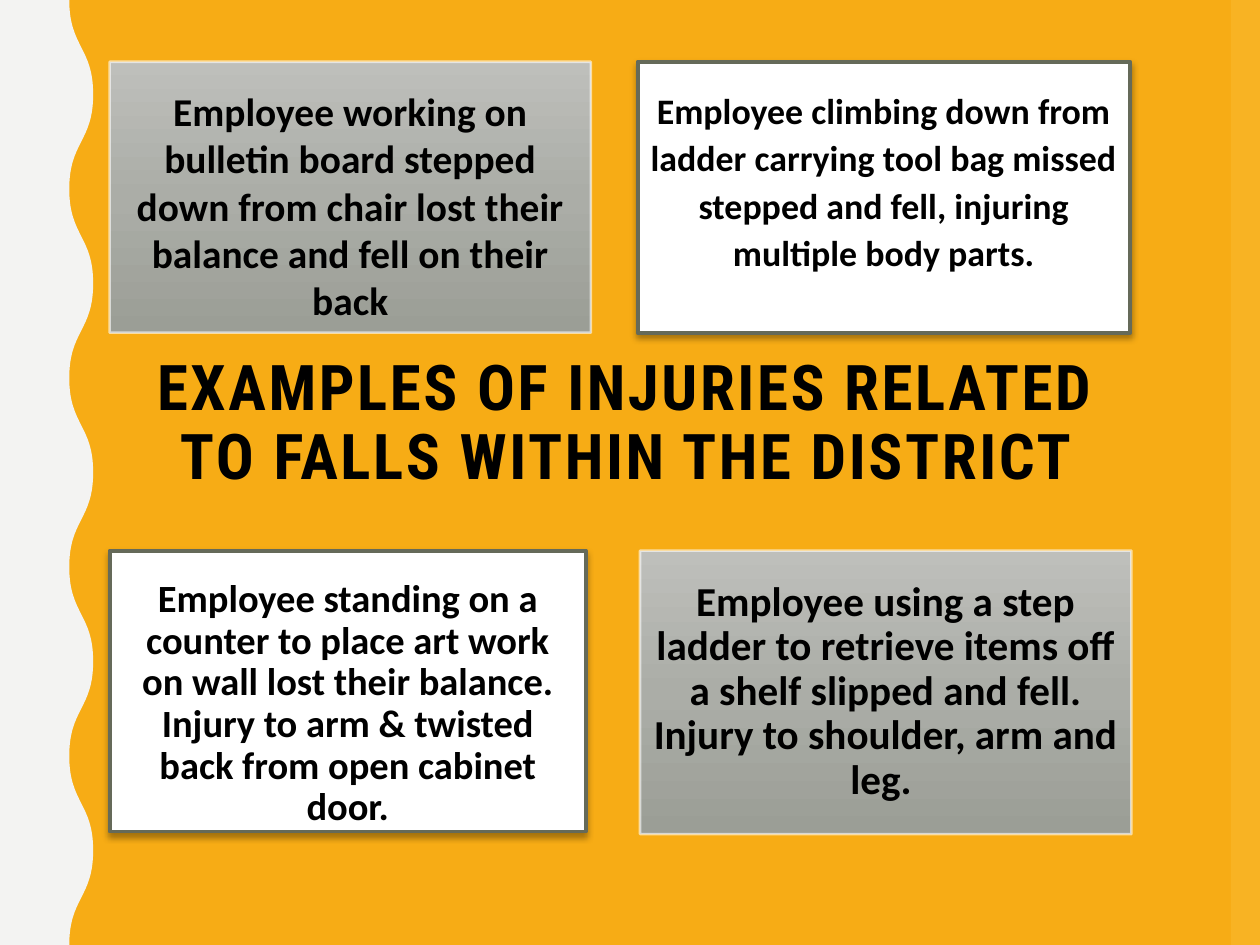
import copy
from dataclasses import dataclass

import pptx
import pptx.dml.color
import pptx.enum.shapes
import pptx.enum.text
import pptx.oxml
import pptx.oxml.ns
import pptx.util

Inches, Pt = pptx.util.Inches, pptx.util.Pt
PP_ALIGN, ANCHOR = pptx.enum.text.PP_ALIGN, pptx.enum.text.MSO_ANCHOR
RECT = pptx.enum.shapes.MSO_SHAPE.RECTANGLE
qn = pptx.oxml.ns.qn
NS = pptx.oxml.ns.nsdecls("a")
GRAY_STOPS = ("BEBFBB", "ABADA7", "9B9E96")


@dataclass
class Card:
    text: str
    box: tuple[float, float, float, float]
    size: float
    spacing: float
    inset_top: float
    gray: bool
    inset_side: float = 0.08
    middle: bool = False
    ph: int | None = None


CARDS = [
    Card("Employee climbing down from ladder carrying tool bag missed stepped and fell, "
         "injuring multiple body parts.",
         (5.06, 0.49, 3.91, 2.15), 20.5, 1.1, 0.18, False, ph=3),
    Card("Employee working on bulletin board stepped down from chair lost their balance "
         "and fell on their back",
         (0.87, 0.49, 3.82, 2.15), 22.5, 1.0, 0.18, True, middle=True, ph=1),
    Card("Employee standing on a counter to place art work on wall lost their balance. "
         "Injury to arm & twisted back from open cabinet door.",
         (0.87, 4.37, 3.78, 2.23), 22, 0.9, 0.23, False, inset_side=0.15),
    Card("Employee using a step ladder to retrieve items off a shelf slipped and fell. "
         "Injury to shoulder, arm and leg. ",
         (5.08, 4.37, 3.9, 2.25), 23.5, 0.9, 0.24, True),
]


def rgb(value: str) -> pptx.dml.color.RGBColor:
    return pptx.dml.color.RGBColor.from_string(value)


def place(sp, box: tuple[float, float, float, float]) -> None:
    sp.left, sp.top, sp.width, sp.height = map(Inches, box)


def plain_fill(sp, color: str) -> None:
    sp.fill.solid()
    sp.fill.fore_color.rgb = rgb(color)
    sp.line.fill.background()
    sp.shadow.inherit = False


def send_to_back(s, sp) -> None:
    s.shapes._spTree.insert(2, sp._element)


def write(sp, text: str, font: str, size: float, spacing: float, anchor):
    """Fill a shape with one bold, black, centred paragraph."""
    tf = sp.text_frame
    tf.word_wrap = True
    tf.auto_size = pptx.enum.text.MSO_AUTO_SIZE.NONE
    tf.vertical_anchor = anchor
    p = tf.paragraphs[0]
    p.alignment = PP_ALIGN.CENTER
    p.line_spacing = spacing
    p.space_before = Pt(0)
    r = p.add_run()
    r.text = text
    r.font.name, r.font.size, r.font.bold = font, Pt(size), True
    r.font.color.rgb = rgb("000000")
    return r


def style_gray(sp) -> None:
    """Vertical gray gradient with a translucent white outline."""
    sp.fill.gradient()
    sp.fill.gradient_angle = 270
    first, last = sp.fill.gradient_stops
    first.position, last.position = 0, 1
    first.color.rgb, last.color.rgb = rgb(GRAY_STOPS[0]), rgb(GRAY_STOPS[2])
    stops = sp._element.spPr.find(".//" + qn("a:gsLst"))
    mid = copy.deepcopy(stops[0])
    mid.set("pos", "50000")
    mid[0].set("val", GRAY_STOPS[1])
    stops.insert(1, mid)
    sp.line.width = Pt(1.5)
    sp.line.color.rgb = rgb("FFFFFF")
    color = sp.line._ln.find(".//" + qn("a:srgbClr"))
    color.append(pptx.oxml.parse_xml(f'<a:alpha {NS} val="60000"/>'))
    sp.shadow.inherit = False


def style_white(sp) -> None:
    """White card with a dark outline and a soft shadow below."""
    plain_fill(sp, "FFFFFF")
    sp.line.width = Pt(2.25)
    sp.line.color.rgb = rgb("656A59")
    sp._element.spPr.find(qn("a:effectLst")).append(pptx.oxml.parse_xml(
        f'<a:outerShdw {NS} blurRad="{Pt(3.5)}" dist="{Pt(2.2)}" dir="5400000" '
        'algn="ctr" rotWithShape="0"><a:srgbClr val="000000">'
        '<a:alpha val="32000"/></a:srgbClr></a:outerShdw>'))


def draw_card(s, card: Card) -> None:
    if card.ph is None:
        sp = s.shapes.add_shape(RECT, 0, 0, 0, 0)
    else:
        sp = s.placeholders[card.ph]
    place(sp, card.box)
    (style_gray if card.gray else style_white)(sp)
    write(sp, card.text, "Calibri", card.size, card.spacing,
          ANCHOR.MIDDLE if card.middle else ANCHOR.TOP)
    tf = sp.text_frame
    tf.margin_left = tf.margin_right = Inches(card.inset_side)
    tf.margin_top, tf.margin_bottom = Inches(card.inset_top), Inches(0.05)


def draw_wave(s, low: float = 0.55, high: float = 0.74, half: float = 0.75) -> None:
    """Left band whose right edge swings between low and high."""
    knots = [(Inches(high if i % 2 else low), Inches(i * half)) for i in range(11)]
    fb = s.shapes.build_freeform(*knots[0])
    fb.add_line_segments([*knots[1:], (0, Inches(7.5)), (0, 0)], close=True)
    sp = fb.convert_to_shape()

    # Turn the straight steps of the right edge into S-curves
    lines = sp._element.findall(".//" + qn("a:lnTo"))
    for (x0, y0), (x1, y1), line in zip(knots, knots[1:], lines):
        mid = (y0 + y1) // 2
        pts = "".join(f'<a:pt x="{x}" y="{y}"/>'
                      for x, y in ((x0, mid), (x1, mid), (x1, y1)))
        curve = pptx.oxml.parse_xml(f"<a:cubicBezTo {NS}>{pts}</a:cubicBezTo>")
        line.getparent().replace(line, curve)
    plain_fill(sp, "F3F3F2")
    send_to_back(s, sp)


def main() -> None:
    prs = pptx.Presentation()
    prs.slide_width, prs.slide_height = Inches(10), Inches(7.5)
    s = prs.slides.add_slide(prs.slide_layouts[4])
    s.background.fill.solid()
    s.background.fill.fore_color.rgb = rgb("F7AC15")
    for idx in (2, 4):
        sp = s.placeholders[idx]._element
        sp.getparent().remove(sp)

    # Side bands
    draw_wave(s)
    strip = s.shapes.add_shape(RECT, Inches(9.77), 0, Inches(0.23), Inches(7.5))
    plain_fill(strip, "F8B323")
    send_to_back(s, strip)

    # Title
    title = s.shapes.title
    place(title, (0.98, 2.78, 7.98, 1.67))
    r = write(title, "EXAMPLES OF INJURIES RELATED TO FALLS WITHIN THE DISTRICT",
              "Roboto Condensed", 36, 0.9, ANCHOR.TOP)
    r._r.get_or_add_rPr().set("spc", "150")

    # Injury examples
    for card in CARDS:
        draw_card(s, card)
    prs.save("out.pptx")


if __name__ == "__main__":
    main()
